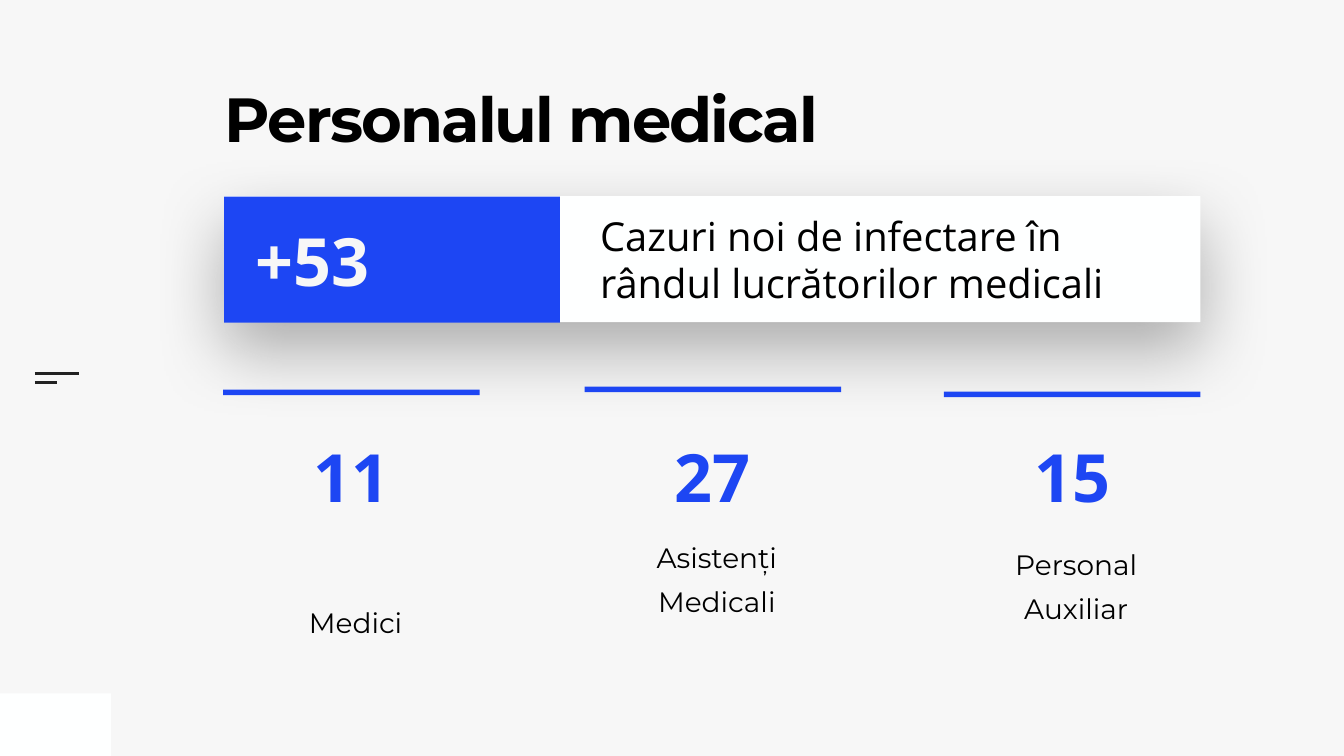
import pptx
import pptx.dml.color
import pptx.enum.shapes
import pptx.enum.text
import pptx.oxml
import pptx.oxml.ns
import pptx.util
from lxml import etree

Inches = pptx.util.Inches
Pt = pptx.util.Pt
ALIGN = pptx.enum.text.PP_ALIGN
ANCHOR = pptx.enum.text.MSO_ANCHOR

BLUE, GRAY, WHITE, BLACK, DARK = "1D46F3", "F7F7F7", "FEFFFF", "000000", "222222"
TITLE = "Personalul medical"
TOTAL = ("+53", "Cazuri noi de infectare în rândul lucrătorilor medicali")
CARDS = [
    {"number": "11", "label": "Medici", "left": 4.43, "top": 7.73, "bar": 7.73},
    {"number": "27", "label": "Asistenți Medicali", "left": 11.6, "top": 7.67, "bar": 7.67},
    {"number": "15", "label": "Personal Auxiliar", "left": 18.73, "top": 7.81, "bar": 7.77},
]
MENU_LINES = [(7.41, 0.88), (7.59, 0.44)]
CARD_WIDTH, CARD_HEIGHT, BAR_HEIGHT = 5.09, 5.46, 0.11
NUMBER_TOP, NUMBER_HEIGHT = 8.54, 1.8


def color(value):
    return pptx.dml.color.RGBColor.from_string(value)


def add_rectangle(slide, box, fill):
    shape = slide.shapes.add_shape(
        pptx.enum.shapes.MSO_SHAPE.RECTANGLE, *(Inches(value) for value in box))
    shape.shadow.inherit = False
    shape.fill.solid()
    shape.fill.fore_color.rgb = color(fill)
    shape.line.fill.background()
    return shape


def add_text(slide, text, box, size, font="Open Sans", fill=BLACK, bold=False,
             align=ALIGN.LEFT, anchor=ANCHOR.MIDDLE, insets=(0.1, 0.1, 0.1, 0.1),
             line_spacing=None, space_before=None, tracking=None):
    shape = slide.shapes.add_textbox(*(Inches(value) for value in box))
    frame = shape.text_frame
    frame.word_wrap = True
    frame.vertical_anchor = anchor
    (frame.margin_left, frame.margin_top,
     frame.margin_right, frame.margin_bottom) = (Inches(value) for value in insets)
    paragraph = frame.paragraphs[0]
    paragraph.alignment = align
    if line_spacing:
        paragraph.line_spacing = line_spacing
    if space_before:
        paragraph.space_before = Pt(space_before)
    run = paragraph.add_run()
    run.text = text
    run.font.name = font
    run.font.size = Pt(size)
    run.font.bold = bold
    run.font.color.rgb = color(fill)
    if tracking:
        run._r.get_or_add_rPr().set("spc", str(round(tracking * 100)))
    return shape


def add_line(slide, left, top, length):
    line = slide.shapes.add_connector(
        pptx.enum.shapes.MSO_CONNECTOR.STRAIGHT,
        Inches(left), Inches(top), Inches(left + length), Inches(top))
    line.line.color.rgb = color(DARK)
    line.line.width = Pt(3)
    etree.SubElement(line._element.spPr, pptx.oxml.ns.qn("a:effectLst"))


def add_shadow(shape, blur, distance, opacity):
    effects = shape._element.spPr.find(pptx.oxml.ns.qn("a:effectLst"))
    effects.append(pptx.oxml.parse_xml(
        f'<a:outerShdw {pptx.oxml.ns.nsdecls("a")} blurRad="{Pt(blur)}" '
        f'dist="{Pt(distance)}" dir="5400000" rotWithShape="0">'
        f'<a:srgbClr val="{BLACK}"><a:alpha val="{opacity * 1000}"/></a:srgbClr>'
        '</a:outerShdw>'))


def add_card(slide, card):
    box = (card["left"], card["top"], CARD_WIDTH, CARD_HEIGHT)
    add_rectangle(slide, box, GRAY)
    add_text(slide, card["label"], box, 40, font="Montserrat", align=ALIGN.CENTER,
             anchor=ANCHOR.BOTTOM, insets=(0.55, 0.71, 0.39, 0.87),
             line_spacing=1.3, space_before=20)


def add_banner(slide):
    number, description = TOTAL
    panel = add_rectangle(slide, (4.45, 3.89, 19.37, 2.5), WHITE)
    add_shadow(panel, blur=100, distance=40, opacity=30)
    add_text(slide, description, (11.81, 4.08, 11.76, 2.12), 57)
    add_rectangle(slide, (4.45, 3.9, 6.66, 2.5), BLUE)
    add_text(slide, number, (4.98, 4.25, 6.03, 1.8), 95, fill=GRAY, bold=True)


def main():
    presentation = pptx.Presentation()
    presentation.slide_width = Inches(26.67)
    presentation.slide_height = Inches(15)
    slide = presentation.slides.add_slide(presentation.slide_layouts[6])
    slide.background.fill.solid()
    slide.background.fill.fore_color.rgb = color(GRAY)

    add_rectangle(slide, (0, 13.76, 2.2, 1.24), WHITE)
    for top, length in MENU_LINES:
        add_line(slide, 0.69, top, length)
    for card in CARDS:
        add_card(slide, card)
    add_text(slide, TITLE, (4.46, 1.87, 13.01, 2.73), 89, font="Montserrat", bold=True,
             anchor=ANCHOR.TOP, insets=(0, 0, 0, 0), line_spacing=0.8, tracking=-2.7)
    add_banner(slide)
    for card in CARDS:
        add_rectangle(slide, (card["left"], card["bar"], CARD_WIDTH, BAR_HEIGHT), BLUE)
        add_text(slide, card["number"], (card["left"], NUMBER_TOP, CARD_WIDTH, NUMBER_HEIGHT),
                 95, fill=BLUE, bold=True, align=ALIGN.CENTER)

    presentation.save("out.pptx")


if __name__ == "__main__":
    main()
